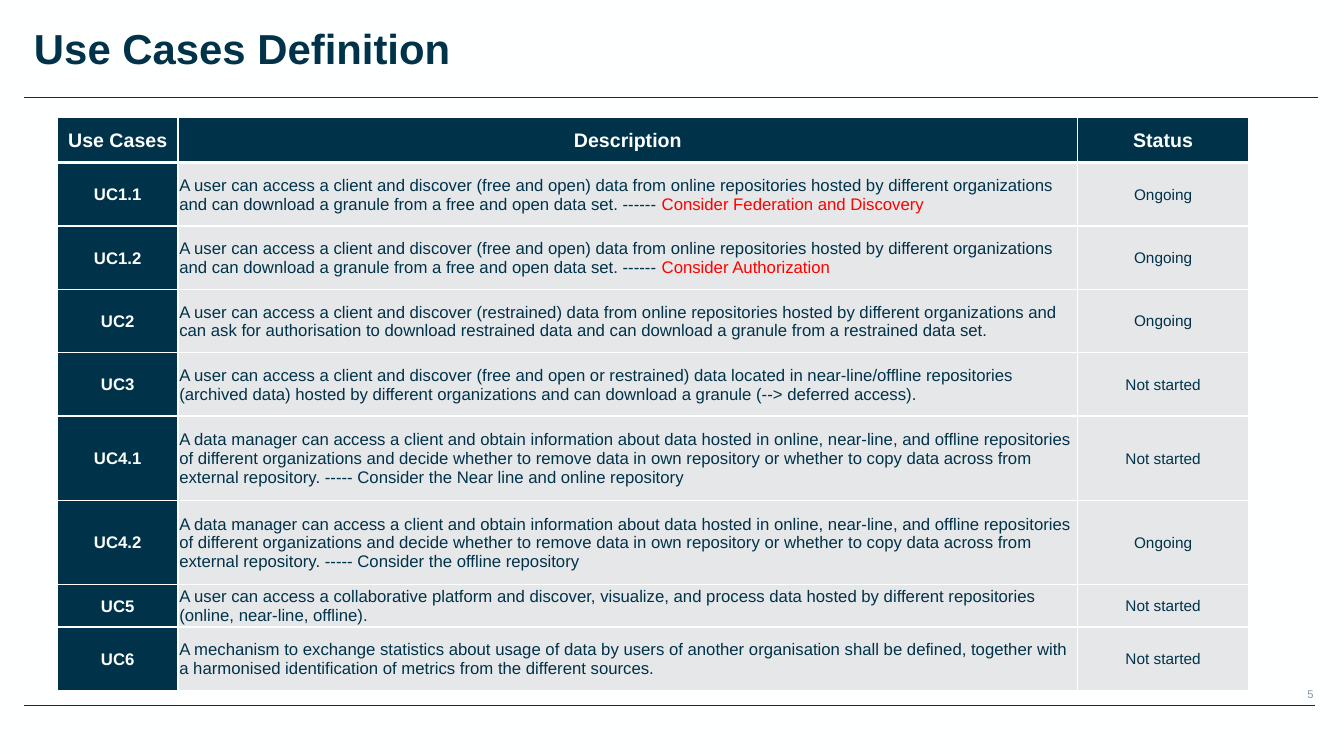
from lxml.etree import SubElement
from pptx import Presentation
from pptx.dml.color import RGBColor
from pptx.enum.shapes import MSO_CONNECTOR
from pptx.enum.text import MSO_ANCHOR, PP_ALIGN
from pptx.oxml.ns import qn
from pptx.util import Cm, Pt

NAVY, WHITE, GREY, RED, SLATE = "003249", "FEFFFF", "E6E7E8", "FF0000", "8197A6"
COLUMN_WIDTHS = (3.05, 22.73, 4.32)
ROW_HEIGHTS = (1.14, 1.6, 1.6, 1.6, 1.6, 2.13, 2.13, 1.07, 1.6)
HEADINGS = ("Use Cases", "Description", "Status")

DOWNLOAD = (
    "A user can access a client and discover (free and open) data from online repositories "
    "hosted by different organizations and can download a granule from a free and open data set. ------ "
)
MANAGE = (
    "A data manager can access a client and obtain information about data hosted in online, near-line, "
    "and offline repositories of different organizations and decide whether to remove data in own "
    "repository or whether to copy data across from external repository. ----- Consider the "
)
USE_CASES = (
    ("UC1.1", DOWNLOAD, "Consider Federation and Discovery", "Ongoing"),
    ("UC1.2", DOWNLOAD, "Consider Authorization", "Ongoing"),
    ("UC2", "A user can access a client and discover (restrained) data from online repositories hosted by "
     "different organizations and can ask for authorisation to download restrained data and can download "
     "a granule from a restrained data set.", "", "Ongoing"),
    ("UC3", "A user can access a client and discover (free and open or restrained) data located in "
     "near-line/offline repositories (archived data) hosted by different organizations and can download "
     "a granule (--> deferred access).", "", "Not started"),
    ("UC4.1", MANAGE + "Near line and online repository", "", "Not started"),
    ("UC4.2", MANAGE + "offline repository", "", "Ongoing"),
    ("UC5", "A user can access a collaborative platform and discover, visualize, and process data hosted by "
     "different repositories (online, near-line, offline).", "", "Not started"),
    ("UC6", "A mechanism to exchange statistics about usage of data by users of another organisation shall be "
     "defined, together with a harmonised identification of metrics from the different sources.", "",
     "Not started"),
)


def rgb(value):
    """Turn a hex string into a colour."""
    return RGBColor.from_string(value)


def style(paragraph, size, color, bold=False, align=PP_ALIGN.LEFT):
    """Set the font and alignment of a paragraph."""
    paragraph.alignment = align
    font = paragraph.font
    font.name, font.size, font.bold = "Arial", Pt(size), bold
    font.color.rgb = rgb(color)


def add_label(slide, text, left, top, width, height, size, color, **options):
    """Add a one-paragraph text box and return its frame."""
    frame = slide.shapes.add_textbox(Cm(left), Cm(top), Cm(width), Cm(height)).text_frame
    frame.word_wrap = True
    frame.vertical_anchor = MSO_ANCHOR.MIDDLE
    frame.text = text
    style(frame.paragraphs[0], size, color, **options)
    return frame


def add_rule(slide, left, right, y):
    """Add a thin horizontal rule."""
    rule = slide.shapes.add_connector(MSO_CONNECTOR.STRAIGHT, Cm(left), Cm(y), Cm(right), Cm(y))
    rule.line.color.rgb = rgb(NAVY)
    rule.line.width = Pt(0.75)
    SubElement(rule.element.spPr, qn("a:effectLst"))


def set_borders(cell, top, bottom):
    """Draw white borders around a cell, with widths in points."""
    properties = cell._tc.get_or_add_tcPr()
    for side, width in (("L", 1), ("R", 1), ("T", top), ("B", bottom)):
        border = SubElement(properties, qn(f"a:ln{side}"), w=str(Pt(width)))
        SubElement(SubElement(border, qn("a:solidFill")), qn("a:srgbClr"), val=WHITE)


def fill_cell(cell, text, fill, size, color, top=1, bottom=1, remark="", **options):
    """Write a table cell, with an optional red remark after the text."""
    set_borders(cell, top, bottom)
    cell.fill.solid()
    cell.fill.fore_color.rgb = rgb(fill)
    cell.vertical_anchor = MSO_ANCHOR.MIDDLE
    cell.margin_left = cell.margin_right = cell.margin_top = Cm(0.03)
    cell.margin_bottom = Cm(0)
    paragraph = cell.text_frame.paragraphs[0]
    style(paragraph, size, color, **options)
    paragraph.add_run().text = text
    if remark:
        run = paragraph.add_run()
        run.text = remark
        run.font.color.rgb = rgb(RED)


def add_use_case_table(slide):
    """Add the table of use cases with their status."""
    table = slide.shapes.add_table(
        len(ROW_HEIGHTS), len(COLUMN_WIDTHS), Cm(1.45), Cm(2.97),
        Cm(sum(COLUMN_WIDTHS)), Cm(sum(ROW_HEIGHTS))).table
    for column, width in zip(table.columns, COLUMN_WIDTHS):
        column.width = Cm(width)
    for row, height in zip(table.rows, ROW_HEIGHTS):
        row.height = Cm(height)
    center = PP_ALIGN.CENTER
    for column, heading in enumerate(HEADINGS):
        fill_cell(table.cell(0, column), heading, NAVY, 14, WHITE, bottom=3, bold=True, align=center)
    for row, (code, description, remark, status) in enumerate(USE_CASES, 1):
        top = 3 if row == 1 else 1
        fill_cell(table.cell(row, 0), code, NAVY, 12, WHITE, top, bold=True, align=center)
        fill_cell(table.cell(row, 1), description, GREY, 12, NAVY, top, remark=remark)
        fill_cell(table.cell(row, 2), status, GREY, 11, NAVY, top, align=center)


def main():
    """Build the slide and save it."""
    presentation = Presentation()
    presentation.slide_width, presentation.slide_height = Cm(33.96), Cm(19.05)
    slide = presentation.slides.add_slide(presentation.slide_layouts[6])
    slide.background.fill.solid()
    slide.background.fill.fore_color.rgb = rgb(WHITE)
    page_number = add_label(slide, "5", 22.78, 17.22, 10.41, 0.61, 8, SLATE, align=PP_ALIGN.RIGHT)
    page_number.margin_right = Cm(0)
    add_rule(slide, 0.61, 33.22, 17.83)
    add_rule(slide, 0.61, 33.3, 2.46)
    add_label(slide, "Use Cases Definition", 0.61, 0.43, 28.09, 1.57, 30, NAVY, bold=True)
    add_use_case_table(slide)
    presentation.save("out.pptx")


if __name__ == "__main__":
    main()
